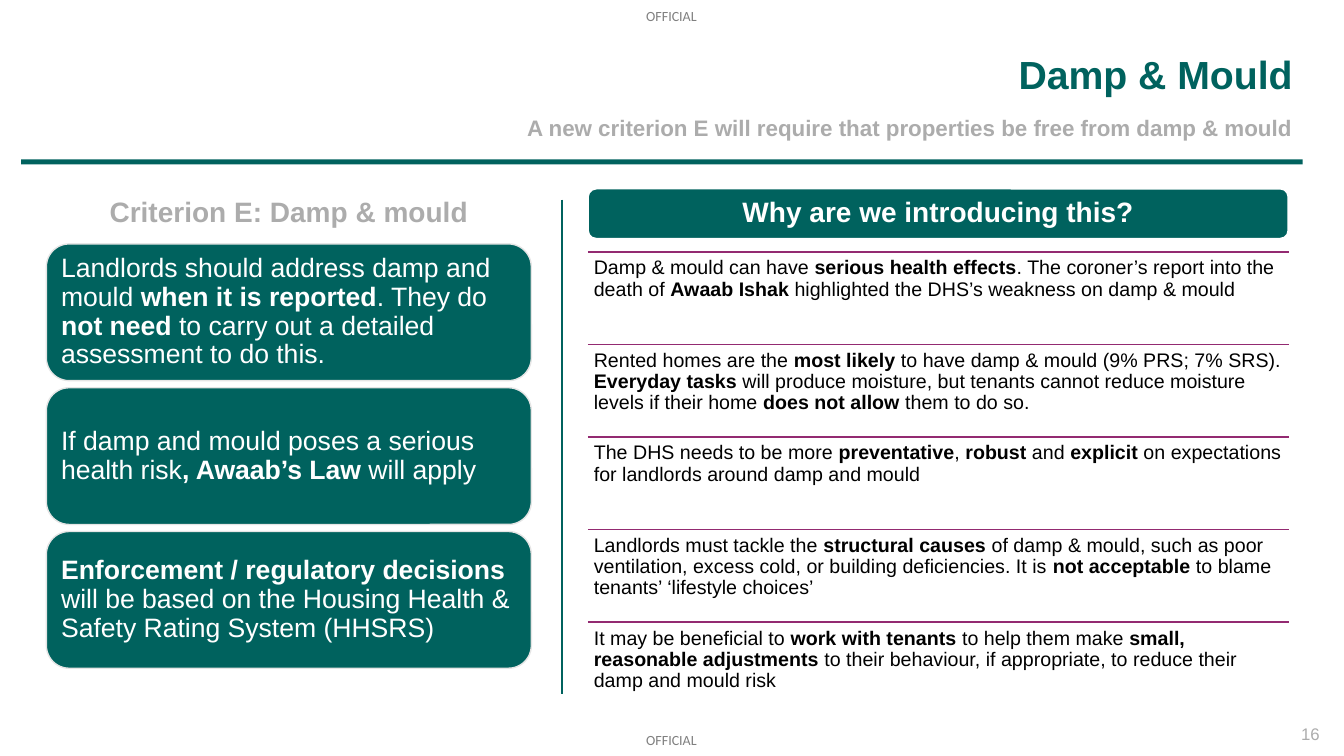
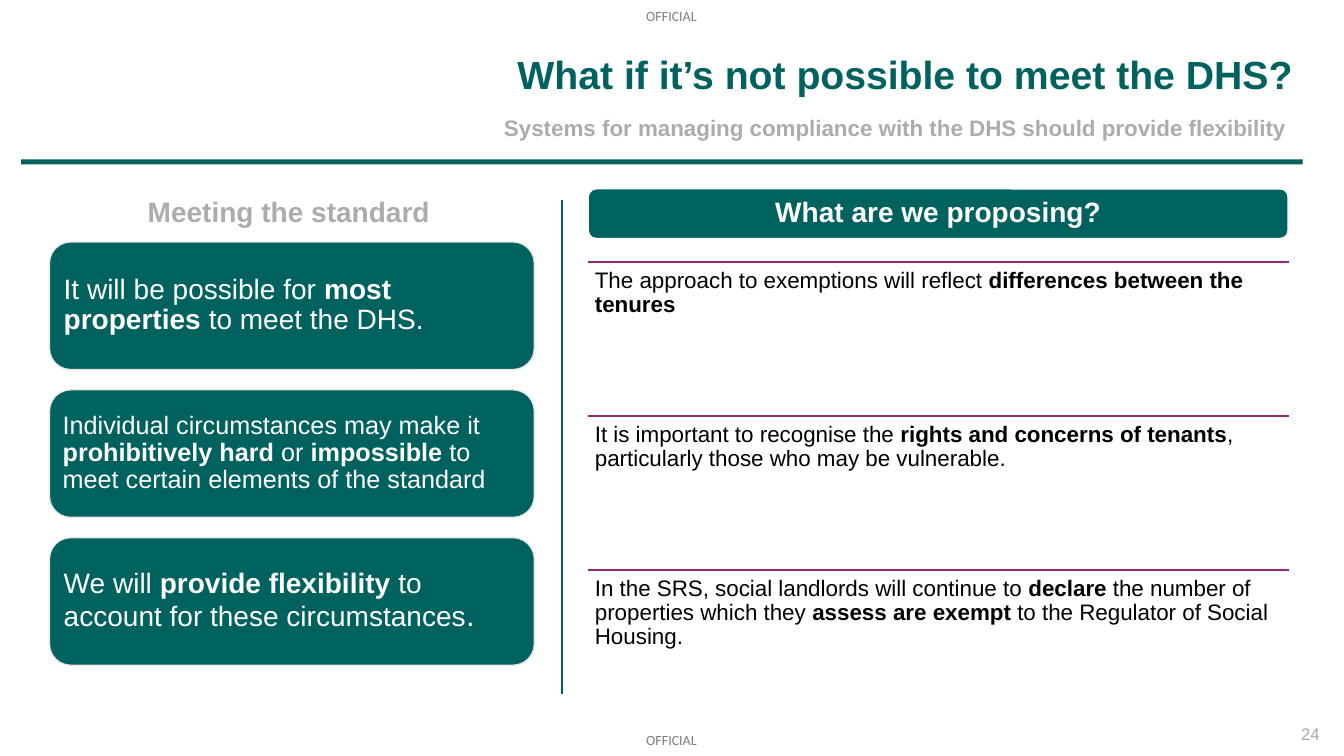
from lxml import etree
from pptx import Presentation
from pptx import util as u
from pptx.dml.color import RGBColor
from pptx.enum import shapes, text
from pptx.oxml import ns

HUES = {"teal": "00625E", "grey": "ACACAC", "plum": "932A71", "edge": "E5E5E5",
        "mark": "7F7F7F", "white": "FFFFFF", "black": "000000"}
WIDE, HIGH = 13.33, 7.5

# Grid of the slide: left edge and width of each column, top of the heads
LEFT, LEFT_W = 0.46, 4.81
RIGHT, RIGHT_W = 5.83, 6.95
SPLIT = 5.57
HEAD_Y, HEAD_H = 1.87, 0.5
EDGE = 12.82

ALIGN = {"l": text.PP_ALIGN.LEFT, "c": text.PP_ALIGN.CENTER, "r": text.PP_ALIGN.RIGHT}
ANCHOR = {"t": text.MSO_ANCHOR.TOP, "m": text.MSO_ANCHOR.MIDDLE, "b": text.MSO_ANCHOR.BOTTOM}


def hue(name):
    return RGBColor.from_string(HUES[name])


def inch(box):
    return [u.Inches(n) for n in box]


def write(shape, words, size=14, color="black", bold=False, align="l", anchor="t",
          pad=0, font="Arial", lead=0.9, wrap=True, last=None):
    """Fill a shape with one paragraph; *stars* switch bold, last sizes the final run."""
    frame = shape.text_frame
    frame.word_wrap = wrap
    frame.auto_size = text.MSO_AUTO_SIZE.NONE
    frame.vertical_anchor = ANCHOR[anchor]
    frame.margin_left = frame.margin_right = u.Inches(pad)
    frame.margin_top = frame.margin_bottom = u.Inches(pad)
    para = frame.paragraphs[0]
    para.alignment, para.line_spacing = ALIGN[align], lead
    para.space_before = u.Pt(0)
    for i, part in enumerate(words.split("*")):
        if part:
            run = para.add_run()
            run.text = part
            run.font.name, run.font.size = font, u.Pt(size)
            run.font.bold = bold or i % 2 == 1
            run.font.color.rgb = hue(color)
    if last:
        run.font.size = u.Pt(last)


def label(slide, box, words, **form):
    shape = slide.shapes.add_textbox(*inch(box))
    write(shape, words, **form)
    return shape


def block(slide, box, fill, edge=None, width=1, kind="ROUNDED_RECTANGLE"):
    shape = slide.shapes.add_shape(getattr(shapes.MSO_SHAPE, kind), *inch(box))
    shape.shadow.inherit = False
    shape.fill.solid()
    shape.fill.fore_color.rgb = hue(fill)
    if edge:
        shape.line.color.rgb = hue(edge)
        shape.line.width = u.Pt(width)
    else:
        shape.line.fill.background()
    return shape


def rule(slide, x1, y1, x2, y2, color, width):
    line = slide.shapes.add_connector(shapes.MSO_CONNECTOR.STRAIGHT, *inch((x1, y1, x2, y2)))
    line.line.color.rgb = hue(color)
    line.line.width = u.Pt(width)
    etree.SubElement(line.element.spPr, ns.qn("a:effectLst"))


def hold(shape, box, words, **form):
    """Move a placeholder to its box and fill it."""
    shape.left, shape.top, shape.width, shape.height = inch(box)
    write(shape, words, **form)


def frame(slide, layout):
    """Markings and title band, kept on the layout."""
    parts = [label(slide, (6.41, y, 0.53, 0.17), "OFFICIAL", size=10, color="mark",
                   font="Calibri", lead=1, wrap=False) for y in (0.07, 7.26)]
    parts.append(block(slide, (0.21, 1.58, 12.71, 0.05), "teal", kind="RECTANGLE"))
    for part in parts:
        layout.shapes.element.append(part.element)


def top(slide, title, sub, num):
    """Title, subtitle and page number."""
    hold(slide.shapes.title, (4.5, 0.55, EDGE - 4.5, 0.42), title, size=28,
         color="teal", bold=True, align="r", anchor="b")
    hold(slide.placeholders[1], (0.21, 1.16, EDGE - 0.21, 0.24), sub, size=16,
         color="grey", bold=True, align="r")
    label(slide, (12.47, 7.18, 0.62, 0.2), num, size=12, color="grey",
          align="r", anchor="m", lead=1)


def cards(slide, box, gap, items):
    """Equal rounded cards down the box; each item is words and format."""
    x, y, w, h = box
    tall = (h - gap * (len(items) - 1)) / len(items)
    for i, (words, form) in enumerate(items):
        card = block(slide, (x, y + i * (tall + gap), w, tall), "teal", "edge")
        write(card, words, **{"color": "white", "anchor": "m", "pad": 0.08, **form})


def rows(slide, box, items, **form):
    """Equal rows down the box, each under a rule."""
    x, y, w, h = box
    tall = h / len(items)
    for i, words in enumerate(items):
        at = y + i * tall
        rule(slide, x, at, x + w, at, "plum", 1)
        label(slide, (x, at, w, tall), words, **form)


def page(deck, layout, data):
    slide = deck.slides.add_slide(layout)
    for spare in (2, 4):
        part = slide.placeholders[spare].element
        part.getparent().remove(part)
    top(slide, data["title"], data["sub"], data["num"])
    # Left column
    hold(slide.placeholders[3], (LEFT, HEAD_Y, LEFT_W, HEAD_H), data["left"], size=20,
         color="grey", bold=True, align="c", anchor="m")
    x, y, h = data["cards_at"]
    cards(slide, (x, y, LEFT_W, h), data["gap"], data["cards"])
    rule(slide, SPLIT, 1.98, SPLIT, 6.89, "teal", 1.5)
    # Right column
    y, h = data["rows_at"]
    rows(slide, (RIGHT, y, RIGHT_W, h), data["rows"], **data["form"])
    head = block(slide, (RIGHT, HEAD_Y, RIGHT_W, HEAD_H), "teal", "white", 1.5)
    write(head, data["right"], size=20, color="white", bold=True, align="c", anchor="m")
    return slide


PAGES = [
    {"title": "Damp & Mould", "num": "16",
     "sub": "A new criterion E will require that properties be free from damp & mould",
     "left": "Criterion E: Damp & mould", "right": "Why are we introducing this?",
     "cards_at": (LEFT, 2.42, 4.21), "gap": 0.07,
     "cards": [
         ("Landlords should address damp and mould *when it is reported*. They do "
          "*not need *to carry out a detailed assessment to do this.", {"size": 19}),
         ("If damp and mould poses a serious health risk*, Awaab’s Law *will apply",
          {"size": 19}),
         ("*Enforcement / regulatory decisions* will be based on the Housing Health & "
          "Safety Rating System (HHSRS)", {"size": 19})],
     "rows_at": (2.5, 4.59), "form": {"size": 14, "pad": 0.06},
     "rows": [
         "Damp & mould can have *serious health effects*. The coroner’s report into the "
         "death of *Awaab Ishak *highlighted the DHS’s weakness on damp & mould",
         "Rented homes are the *most likely *to have damp & mould (9% PRS; 7% SRS). "
         "*Everyday tasks *will produce moisture, but tenants cannot reduce moisture "
         "levels if their home *does not allow *them to do so.",
         "The DHS needs to be more *preventative*, *robust* and *explicit* on "
         "expectations for landlords around damp and mould",
         "Landlords must tackle the *structural causes *of damp & mould, such as poor "
         "ventilation, excess cold, or building deficiencies. It is *not acceptable *to "
         "blame tenants’ ‘lifestyle choices’",
         "It may be beneficial to *work with tenants *to help them make *small, "
         "reasonable adjustments* to their behaviour, if appropriate, to reduce their "
         "damp and mould risk"]},
    {"title": "What if it’s not possible to meet the DHS?", "num": "24",
     "sub": "Systems for managing compliance with the DHS should provide flexibility ",
     "left": "Meeting the standard", "right": "What are we proposing?",
     "cards_at": (0.49, 2.4, 4.2), "gap": 0.2,
     "cards": [
         ("It will be possible for *most properties *to meet the DHS.", {"size": 20}),
         ("Individual circumstances may make it *prohibitively hard *or* impossible *to "
          "meet certain elements of the standard", {"size": 18, "pad": 0.07}),
         ("We will *provide flexibility *to account for these circumstances**.",
          {"size": 20, "last": 22})],
     "rows_at": (2.6, 4.58), "form": {"size": 16, "pad": 0.07},
     "rows": [
         "The approach to exemptions will reflect *differences between the tenures*",
         "It is important to recognise the *rights and concerns of tenants*, "
         "particularly those who may be vulnerable.",
         "In the SRS, social landlords will continue to *declare *the number of "
         "properties which they *assess are exempt *to the Regulator of Social Housing."]},
]


def main():
    deck = Presentation()
    deck.slide_width, deck.slide_height = inch((WIDE, HIGH))
    layout = deck.slide_layouts.get_by_name("Comparison")
    made = [page(deck, layout, data) for data in PAGES]
    frame(made[0], layout)
    deck.save("out.pptx")


if __name__ == "__main__":
    main()
